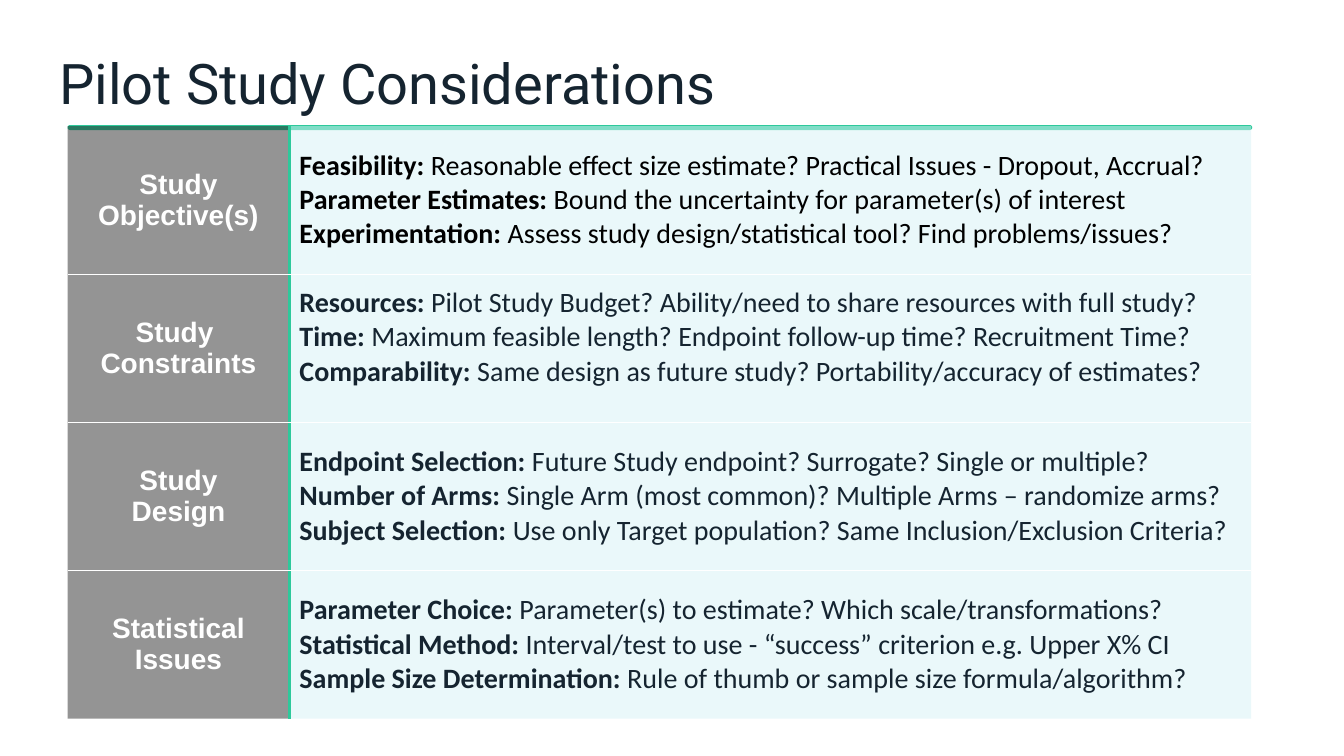
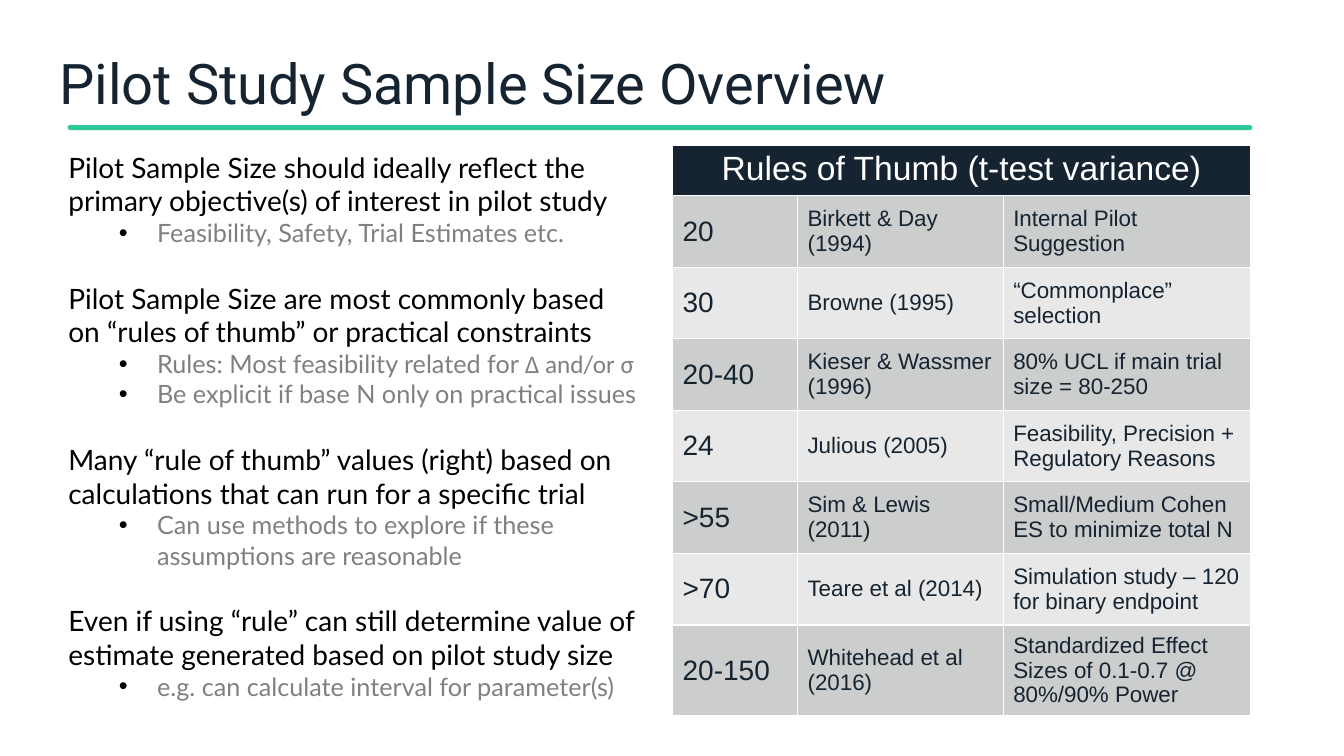
from dataclasses import dataclass

import pptx
import pptx.dml.color
import pptx.enum.shapes
import pptx.enum.text
import pptx.oxml
import pptx.oxml.ns
import pptx.util
from pptx.util import Inches

ALIGN = pptx.enum.text.PP_ALIGN
ANCHOR = pptx.enum.text.MSO_ANCHOR


@dataclass(frozen=True)
class Theme:
    navy: str = "152430"
    green: str = "2EC99B"
    white: str = "FFFFFF"
    black: str = "000000"
    grey: str = "808080"
    label_fill: str = "262626"
    detail_fill: str = "D6F2F6"
    band_fills: tuple = ("CCCDCD", "E8E8E8")
    veil: int = 49  # opacity of the considerations cells, in percent
    title_font: str = "Roboto"
    body_font: str = "Lato"
    detail_font: str = "Calibri"
    table_font: str = "Arial"
    title_size: int = 40
    header_size: int = 24
    text_size: int = 20
    bullet_size: int = 18
    cell_size: int = 16
    thin: int = 1
    thick: int = 3


THEME = Theme()
NO_TABLE_STYLE = "{2D5ABB26-0587-4C30-8999-92F81FD0307C}"

CONSIDERATIONS = [
    (("Study", "Objective(s)"), [
        ("Feasibility: ", "Reasonable effect size estimate? Practical Issues - Dropout, Accrual?"),
        ("Parameter Estimates: ", "Bound the uncertainty for parameter(s) of interest"),
        ("Experimentation: ", "Assess study design/statistical tool? Find problems/issues?"),
    ]),
    (("Study ", "Constraints"), [
        ("Resources: ", "Pilot Study Budget? Ability/need to share resources with full study?"),
        ("Time: ", "Maximum feasible length? Endpoint follow-up time? Recruitment Time?"),
        ("Comparability: ", "Same design as future study? Portability/accuracy of estimates?"),
    ]),
    (("Study", "Design"), [
        ("Endpoint Selection: ", "Future Study endpoint? Surrogate? Single or multiple?"),
        ("Number of Arms: ", "Single Arm (most common)? Multiple Arms – randomize arms?"),
        ("Subject Selection: ", "Use only Target population? Same Inclusion/Exclusion Criteria?"),
    ]),
    (("Statistical", "Issues"), [
        ("Parameter Choice: ", "Parameter(s) to estimate? Which scale/transformations?"),
        ("Statistical Method: ", "Interval/test to use - “success” criterion e.g. Upper X% CI"),
        ("Sample Size Determination: ", "Rule of thumb or sample size formula/algorithm?"),
    ]),
]

# Each point has its bullets; a bullet is a list of (text, font) runs.
OVERVIEW = [
    ("Pilot Sample Size should ideally reflect the primary objective(s) of interest in pilot study",
     [[("Feasibility, Safety, Trial Estimates etc.", THEME.body_font)]]),
    ("Pilot Sample Size are most commonly based on “rules of thumb” or practical constraints",
     [[("Rules: Most feasibility related for ", THEME.body_font),
       ("Δ and/or σ", THEME.detail_font)],
      [("Be explicit if base N only on practical issues", THEME.body_font)]]),
    ("Many “rule of thumb” values (right) based on calculations that can run for a specific trial",
     [[("Can use methods to explore if these assumptions are reasonable", THEME.body_font)]]),
    ("Even if using “rule” can still determine value of estimate generated based on pilot study size",
     [[("e.g. can calculate interval for parameter(s)", THEME.body_font)]]),
]

RULES_OF_THUMB = [
    ("20", "Birkett & Day (1994)", "Internal Pilot Suggestion"),
    ("30", "Browne (1995)", "“Commonplace” selection"),
    ("20-40", "Kieser & Wassmer (1996)", "80% UCL if main trial size = 80-250"),
    ("24", "Julious (2005)", "Feasibility, Precision + Regulatory Reasons"),
    (">55", "Sim & Lewis (2011)", "Small/Medium Cohen ES to minimize total N"),
    (">70", "Teare et al (2014)", "Simulation study – 120 for binary endpoint"),
    ("20-150", "Whitehead et al (2016)", "Standardized Effect Sizes of 0.1-0.7 @ 80%/90% Power"),
]


def rgb(color):
    return pptx.dml.color.RGBColor.from_string(color)


def set_font(font, size, name, color, bold=False):
    font.size = pptx.util.Pt(size)
    font.name = name
    font.color.rgb = rgb(color)
    font.bold = bold


def add_run(paragraph, text):
    run = paragraph.add_run()
    run.text = text
    return run


def paragraphs(frame, count):
    """Return count paragraphs, the first being the one the frame already has."""
    return [frame.paragraphs[0]] + [frame.add_paragraph() for _ in range(count - 1)]


def add_titled_slide(deck, title):
    slide = deck.slides.add_slide(deck.slide_layouts[5])
    heading = slide.shapes.title
    heading.left, heading.top = Inches(0.59), Inches(0.38)
    heading.width, heading.height = Inches(12.16), Inches(0.78)
    frame = heading.text_frame
    frame.text = title
    frame.vertical_anchor = ANCHOR.BOTTOM
    frame.margin_left = frame.margin_right = frame.margin_top = frame.margin_bottom = 0
    line = frame.paragraphs[0]
    line.alignment = ALIGN.LEFT
    line.line_spacing = 0.9
    set_font(line.font, THEME.title_size, THEME.title_font, THEME.navy)

    rule = slide.shapes.add_shape(pptx.enum.shapes.MSO_SHAPE.ROUNDED_RECTANGLE,
                                  Inches(0.67), Inches(1.24), Inches(11.75), Inches(0.05))
    rule.adjustments[0] = 0.5
    rule.shadow.inherit = False
    rule.fill.solid()
    rule.fill.fore_color.rgb = rgb(THEME.green)
    rule.line.fill.background()
    return slide


def add_plain_table(slide, left, top, widths, heights):
    table = slide.shapes.add_table(len(heights), len(widths), Inches(left), Inches(top),
                                   Inches(sum(widths)), Inches(sum(heights))).table
    table.first_row = table.horz_banding = False
    table._tbl.tblPr.find(pptx.oxml.ns.qn("a:tableStyleId")).text = NO_TABLE_STYLE
    for column, width in zip(table.columns, widths):
        column.width = Inches(width)
    for row, height in zip(table.rows, heights):
        row.height = Inches(height)
    return table


def fill_cell(cell, color, opacity=100):
    cell.fill.solid()
    cell.fill.fore_color.rgb = rgb(color)
    if opacity < 100:
        tint = cell._tc.tcPr.find(".//" + pptx.oxml.ns.qn("a:srgbClr"))
        alpha = pptx.oxml.parse_xml(
            f'<a:alpha {pptx.oxml.ns.nsdecls("a")} val="{opacity * 1000}"/>')
        tint.append(alpha)


def set_borders(cell, **sides):
    """Draw borders given as L, R, T or B = (color, points)."""
    properties = cell._tc.get_or_add_tcPr()
    drawn = [side for side in "LRTB" if side in sides]
    for position, side in enumerate(drawn):
        color, points = sides[side]
        properties.insert(position, pptx.oxml.parse_xml(
            f'<a:ln{side} {pptx.oxml.ns.nsdecls("a")} w="{pptx.util.Pt(points)}">'
            f'<a:solidFill><a:srgbClr val="{color}"/></a:solidFill></a:ln{side}>'))


def add_bullet(paragraph):
    properties = paragraph._p.get_or_add_pPr()
    properties.set("marL", str(Inches(0.88)))
    properties.set("indent", str(Inches(-0.38)))
    namespace = pptx.oxml.ns.nsdecls("a")
    for xml in (f'<a:buClr {namespace}><a:srgbClr val="{THEME.black}"/></a:buClr>',
                f'<a:buFont {namespace} typeface="Arial"/>',
                f'<a:buChar {namespace} char="•"/>'):
        properties.append(pptx.oxml.parse_xml(xml))


def add_considerations(slide):
    last = len(CONSIDERATIONS) - 1
    table = add_plain_table(slide, 0.67, 1.25, (2.2, 9.54), (1.47,) * (last + 1))
    divider = (THEME.white, THEME.thin)
    spine = (THEME.green, THEME.thick)
    for index, (label_lines, details) in enumerate(CONSIDERATIONS):
        label, detail = table.cell(index, 0), table.cell(index, 1)
        dividers = {}
        if index > 0:
            dividers["T"] = divider
        if index < last:
            dividers["B"] = divider
        for cell, color, side in ((label, THEME.label_fill, "R"),
                                  (detail, THEME.detail_fill, "L")):
            cell.vertical_anchor = ANCHOR.MIDDLE
            cell.margin_top = cell.margin_bottom = Inches(0.1)
            fill_cell(cell, color, THEME.veil)
            set_borders(cell, **dividers, **{side: spine})

        for line, text in zip(paragraphs(label.text_frame, len(label_lines)), label_lines):
            add_run(line, text)
            line.alignment = ALIGN.CENTER
            set_font(line.font, THEME.text_size, THEME.table_font, THEME.white, bold=True)

        color = THEME.navy if index else THEME.black
        for line, (topic, question) in zip(paragraphs(detail.text_frame, len(details)), details):
            set_font(line.font, THEME.text_size, THEME.detail_font, color)
            add_run(line, topic).font.bold = True
            add_run(line, question)
    # The constraints sit a little above the middle of their row.
    table.cell(1, 1).margin_bottom = Inches(0.32)


def add_overview(slide):
    frame = slide.shapes.add_textbox(Inches(0.58), Inches(1.44),
                                     Inches(5.86), Inches(5.92)).text_frame
    frame.word_wrap = True
    lines = iter(paragraphs(frame, sum(1 + len(bullets) for _, bullets in OVERVIEW)))
    for index, (point, bullets) in enumerate(OVERVIEW):
        line = next(lines)
        add_run(line, point)
        if index:
            line.space_before = pptx.util.Pt(24)
        set_font(line.font, THEME.text_size, THEME.body_font, THEME.black)
        for runs in bullets:
            line = next(lines)
            line.level = 1
            add_bullet(line)
            set_font(line.font, THEME.bullet_size, THEME.body_font, THEME.grey)
            for text, font_name in runs:
                run = add_run(line, text)
                if font_name != THEME.body_font:
                    run.font.name = font_name


def add_rules_of_thumb(slide):
    heights = (0.5,) + (0.71,) * (len(RULES_OF_THUMB) - 1) + (0.9,)
    table = add_plain_table(slide, 6.67, 1.44, (1.24, 2.04, 2.45), heights)
    grid = dict.fromkeys("LRTB", (THEME.white, THEME.thin))

    header = table.cell(0, 0)
    header.merge(table.cell(0, 2))
    header.text = "Rules of Thumb (t-test variance)"
    line = header.text_frame.paragraphs[0]
    line.alignment = ALIGN.CENTER
    set_font(line.font, THEME.header_size, THEME.table_font, THEME.white)
    fill_cell(header, THEME.navy)
    set_borders(header, **grid)

    for row, values in enumerate(RULES_OF_THUMB, start=1):
        for column, value in enumerate(values):
            cell = table.cell(row, column)
            cell.text = value
            cell.vertical_anchor = ANCHOR.MIDDLE
            size = THEME.cell_size if column else THEME.text_size
            set_font(cell.text_frame.paragraphs[0].font, size, THEME.table_font, THEME.navy)
            fill_cell(cell, THEME.band_fills[(row - 1) % 2])
            set_borders(cell, **grid)


def main():
    deck = pptx.Presentation()
    deck.slide_width, deck.slide_height = Inches(13.33), Inches(7.5)

    add_considerations(add_titled_slide(deck, "Pilot Study Considerations"))

    overview = add_titled_slide(deck, "Pilot Study Sample Size Overview")
    add_overview(overview)
    add_rules_of_thumb(overview)

    deck.save("out.pptx")


if __name__ == "__main__":
    main()
